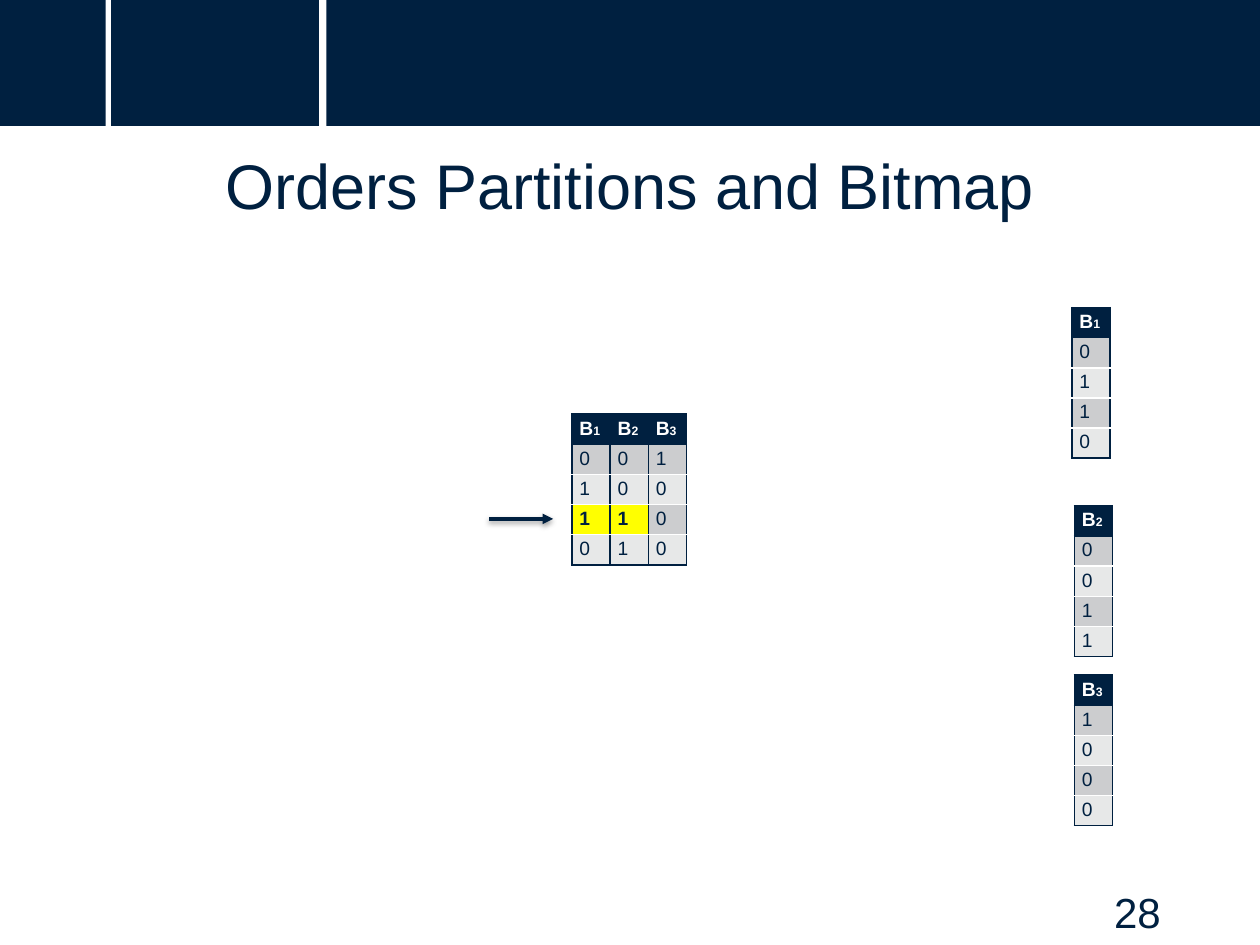
from dataclasses import dataclass

from lxml import etree
from pptx import Presentation
from pptx.dml.color import RGBColor
from pptx.enum.shapes import MSO_CONNECTOR, MSO_SHAPE
from pptx.enum.text import MSO_ANCHOR, PP_ALIGN
from pptx.oxml import parse_xml
from pptx.oxml.ns import nsdecls, qn
from pptx.util import Cm, Pt

RECTANGLE = MSO_SHAPE.RECTANGLE
STRAIGHT = MSO_CONNECTOR.STRAIGHT
TOP = MSO_ANCHOR.TOP
CENTER = PP_ALIGN.CENTER
RIGHT = PP_ALIGN.RIGHT

NAVY = RGBColor(0x00, 0x20, 0x40)
WHITE = RGBColor(0xFF, 0xFF, 0xFF)
DARK_BAND = RGBColor(0xCC, 0xCD, 0xCF)
LIGHT_BAND = RGBColor(0xE7, 0xE8, 0xE8)
YELLOW = RGBColor(0xFF, 0xFF, 0x00)

FONT = "Arial"
COLUMN_WIDTH = 0.77
ROW_HEIGHT = 0.58
BANNER_HEIGHT = 2.54


@dataclass(frozen=True)
class Banner:
    left: float
    width: float


@dataclass(frozen=True)
class Label:
    text: str
    left: float
    top: float
    width: float
    height: float
    inset: float
    size: int
    align: PP_ALIGN


@dataclass(frozen=True)
class Bitmap:
    left: float
    top: float
    partitions: tuple[int, ...]
    highlights: tuple[tuple[int, int], ...] = ()


BITS = {1: "0110", 2: "0011", 3: "1000"}

BANNERS = (Banner(0, 2.13), Banner(2.24, 4.19), Banner(6.58, 19.05))

LABELS = (
    Label("Orders Partitions and Bitmap", 1.75, 2.67, 21.89, 2.46, 0.28, 36, CENTER),
    Label("28", 17.93, 17.65, 5.72, 1.02, 0.23, 24, RIGHT),
)

BITMAPS = (
    Bitmap(11.53, 8.35, (1, 2, 3), ((3, 0), (3, 1))),
    Bitmap(21.61, 6.2, (1,)),
    Bitmap(21.66, 10.2, (2,)),
    Bitmap(21.66, 13.61, (3,)),
)


def write_text(para, text: str, *, size: int, color: RGBColor = NAVY, bold: bool = False) -> None:
    span = para.add_run()
    span.text = text
    font = span.font
    font.name = FONT
    font.size = Pt(size)
    font.bold = bold
    font.color.rgb = color


def draw_banner(page, banner: Banner) -> None:
    shape = page.shapes.add_shape(
        RECTANGLE, Cm(banner.left), Cm(0), Cm(banner.width), Cm(BANNER_HEIGHT)
    )
    shape.shadow.inherit = False
    shape.fill.solid()
    shape.fill.fore_color.rgb = NAVY
    shape.line.fill.background()


def draw_label(page, label: Label) -> None:
    box = page.shapes.add_textbox(
        Cm(label.left), Cm(label.top), Cm(label.width), Cm(label.height)
    )
    frame = box.text_frame
    frame.word_wrap = True
    frame.vertical_anchor = TOP
    frame.margin_top = Cm(label.inset)
    para = frame.paragraphs[0]
    para.alignment = label.align
    write_text(para, label.text, size=label.size)


def set_borders(cell, top: RGBColor, bottom: RGBColor) -> None:
    properties = cell._tc.get_or_add_tcPr()
    sides = {"lnL": NAVY, "lnR": NAVY, "lnT": top, "lnB": bottom}
    for position, (side, color) in enumerate(sides.items()):
        border = parse_xml(
            f'<a:{side} {nsdecls("a")} w="{Pt(1)}"><a:solidFill>'
            f'<a:srgbClr val="{color}"/></a:solidFill></a:{side}>'
        )
        properties.insert(position, border)


def style_cell(cell, fill: RGBColor, top: RGBColor, bottom: RGBColor) -> None:
    cell.margin_left = cell.margin_right = Cm(0.15)
    cell.margin_top = cell.margin_bottom = Cm(0.07)
    cell.fill.solid()
    cell.fill.fore_color.rgb = fill
    set_borders(cell, top, bottom)


def draw_bitmap(page, bitmap: Bitmap) -> None:
    column_count = len(bitmap.partitions)
    row_count = len(BITS[1]) + 1
    table = page.shapes.add_table(
        row_count, column_count, Cm(bitmap.left), Cm(bitmap.top),
        Cm(COLUMN_WIDTH * column_count), Cm(ROW_HEIGHT * row_count),
    ).table
    table.horz_banding = False
    for row in table.rows:
        row.height = Cm(ROW_HEIGHT)
    for column, partition in enumerate(bitmap.partitions):
        table.columns[column].width = Cm(COLUMN_WIDTH)
        header = table.cell(0, column)
        style_cell(header, NAVY, NAVY, NAVY)
        para = header.text_frame.paragraphs[0]
        write_text(para, "B", size=11, color=WHITE, bold=True)
        write_text(para, str(partition), size=7, color=WHITE, bold=True)
        for row, bit in enumerate(BITS[partition], start=1):
            marked = (row, column) in bitmap.highlights
            band = DARK_BAND if row % 2 else LIGHT_BAND
            cell = table.cell(row, column)
            style_cell(
                cell,
                YELLOW if marked else band,
                NAVY if row == 1 else WHITE,
                NAVY if row == row_count - 1 else WHITE,
            )
            write_text(cell.text_frame.paragraphs[0], bit, size=11, bold=marked)


def draw_arrow(page, start: float, end: float, height: float) -> None:
    arrow = page.shapes.add_connector(STRAIGHT, Cm(start), Cm(height), Cm(end), Cm(height))
    arrow.line.color.rgb = NAVY
    arrow.line.width = Pt(2)
    etree.SubElement(arrow.line._get_or_add_ln(), qn("a:tailEnd"), type="triangle")
    arrow._element.spPr.append(parse_xml(
        f'<a:effectLst {nsdecls("a")}><a:outerShdw blurRad="{Pt(3.1)}" '
        f'dist="{Pt(1.6)}" dir="5400000" rotWithShape="0">'
        '<a:srgbClr val="000000"><a:alpha val="38000"/></a:srgbClr>'
        '</a:outerShdw></a:effectLst>'
    ))


def main() -> None:
    deck = Presentation()
    deck.slide_width = Cm(25.4)
    deck.slide_height = Cm(19.05)
    page = deck.slides.add_slide(deck.slide_layouts[6])
    for banner in BANNERS:
        draw_banner(page, banner)
    for label in LABELS:
        draw_label(page, label)
    for bitmap in BITMAPS:
        draw_bitmap(page, bitmap)
    draw_arrow(page, 9.86, 11.15, 10.46)
    deck.save("out.pptx")


if __name__ == "__main__":
    main()
